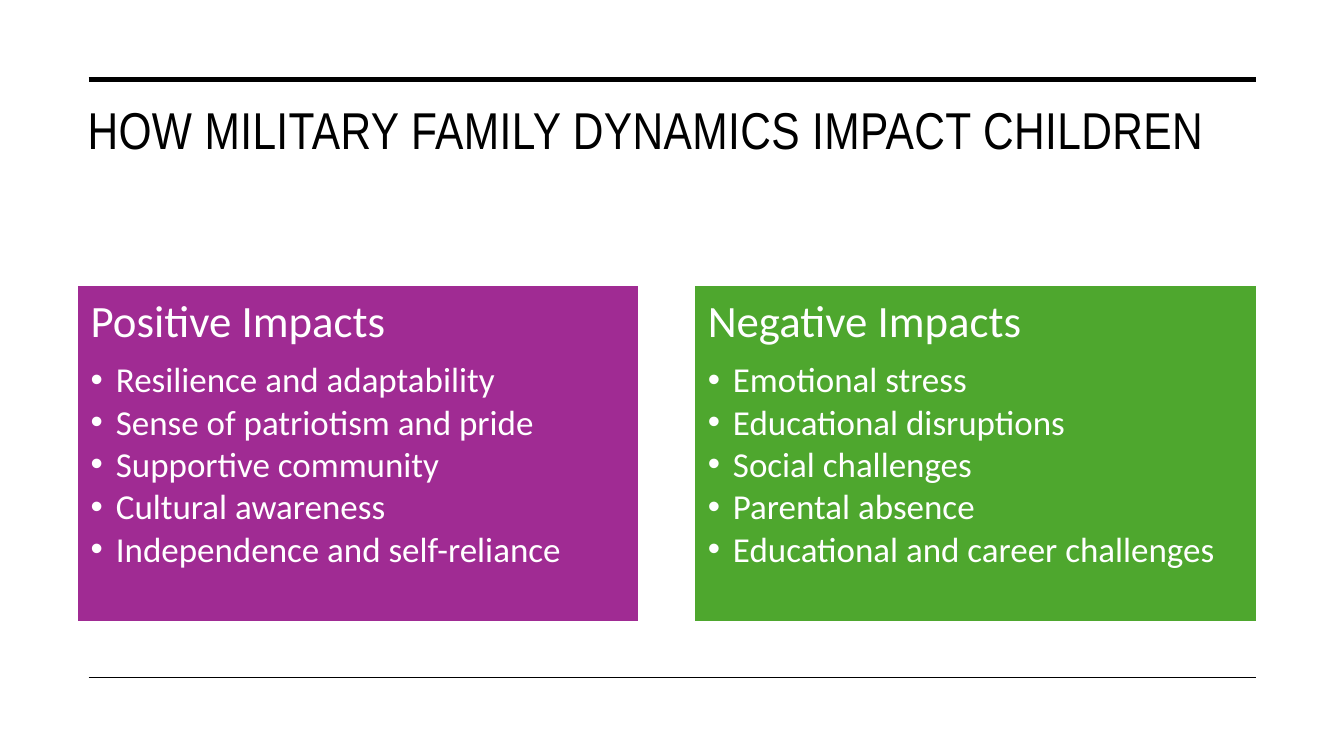
from dataclasses import dataclass

from lxml.etree import SubElement
from pptx import Presentation
from pptx.dml.color import RGBColor as Color
from pptx.enum.shapes import MSO_CONNECTOR as Connector, MSO_SHAPE as Shape
from pptx.enum.text import MSO_ANCHOR as Anchor, PP_ALIGN as Align
from pptx.oxml.ns import qn
from pptx.util import Inches, Pt


@dataclass(frozen=True)
class Theme:
    ink: str = "000000"
    paper: str = "FFFFFF"
    positive: str = "A02B93"
    negative: str = "4EA72E"
    title_font: str = "Arial Narrow"
    body_font: str = "Calibri"
    title_size: float = 37
    heading_size: float = 32
    bullet_size: float = 25


THEME = Theme()
WIDTH, HEIGHT = 13.33, 7.5
LEFT, RIGHT = 0.77, 12.46
GUTTER = 0.55
PANELS = [
    ("Positive Impacts", THEME.positive, [
        "Resilience and adaptability",
        "Sense of patriotism and pride",
        "Supportive community",
        "Cultural awareness",
        "Independence and self-reliance",
    ]),
    ("Negative Impacts", THEME.negative, [
        "Emotional stress",
        "Educational disruptions",
        "Social challenges",
        "Parental absence",
        "Educational and career challenges",
    ]),
]


def write(para, text, *, font, size, color, after=0, bullet=False, tracking=0):
    para.alignment = Align.LEFT
    para.line_spacing = 0.9
    para.space_before = Pt(0)
    para.space_after = Pt(after)
    span = para.add_run()
    span.text = text
    span.font.name = font
    span.font.size = Pt(size)
    span.font.color.rgb = Color.from_string(color)
    if tracking:
        span.font._element.set("spc", str(round(tracking * 100)))
    if bullet:
        properties = para._p.get_or_add_pPr()
        properties.set("marL", str(Inches(0.25)))
        properties.set("indent", str(-Inches(0.25)))
        SubElement(properties, qn("a:buFont")).set("typeface", "Arial")
        SubElement(properties, qn("a:buChar")).set("char", "•")


def prepare_frame(frame, horizontal, vertical):
    frame.word_wrap = True
    frame.vertical_anchor = Anchor.TOP
    frame.margin_left = frame.margin_right = Inches(horizontal)
    frame.margin_top = frame.margin_bottom = Inches(vertical)


def draw_rule(page, left, top, width, weight):
    rule = page.shapes.add_connector(
        Connector.STRAIGHT, *map(Inches, (left, top, left + width, top)))
    rule.line.color.rgb = Color.from_string(THEME.ink)
    rule.line.width = Pt(weight)
    SubElement(rule._element.spPr, qn("a:effectLst"))


def draw_title(page, left, top, width, height, text):
    box = page.shapes.add_textbox(*map(Inches, (left, top, width, height)))
    prepare_frame(box.text_frame, 0.1, 0.05)
    write(box.text_frame.paragraphs[0], text, font=THEME.title_font,
          size=THEME.title_size, color=THEME.ink, tracking=0.3)


def draw_panel(page, left, top, width, height, heading, fill, points):
    panel = page.shapes.add_shape(
        Shape.RECTANGLE, *map(Inches, (left, top, width, height)))
    panel.shadow.inherit = False
    panel.fill.solid()
    panel.fill.fore_color.rgb = Color.from_string(fill)
    panel.line.color.rgb = Color.from_string(THEME.paper)
    panel.line.width = Pt(1)
    frame = panel.text_frame
    prepare_frame(frame, 0.13, 0.13)
    write(frame.paragraphs[0], heading, font=THEME.body_font,
          size=THEME.heading_size, color=THEME.paper, after=11.2)
    for point in points:
        write(frame.add_paragraph(), point, font=THEME.body_font,
              size=THEME.bullet_size, color=THEME.paper, after=3.3, bullet=True)


def draw_panels(page, left, top, width, height):
    panel_width = (width - GUTTER * (len(PANELS) - 1)) / len(PANELS)
    for column, (heading, fill, points) in enumerate(PANELS):
        draw_panel(page, left + column * (panel_width + GUTTER), top,
                   panel_width, height, heading, fill, points)


def main():
    deck = Presentation()
    deck.slide_width, deck.slide_height = Inches(WIDTH), Inches(HEIGHT)
    page = deck.slides.add_slide(deck.slide_layouts[6])
    width = RIGHT - LEFT
    for top, weight in ((0.79, 3.5), (6.72, 1)):
        draw_rule(page, LEFT + 0.11, top, width - 0.11, weight)
    draw_title(page, LEFT, 0.99, width, 1.26,
               "HOW MILITARY FAMILY DYNAMICS IMPACT CHILDREN")
    draw_panels(page, LEFT, 2.83, width, 3.34)
    deck.save("out.pptx")


if __name__ == "__main__":
    main()
